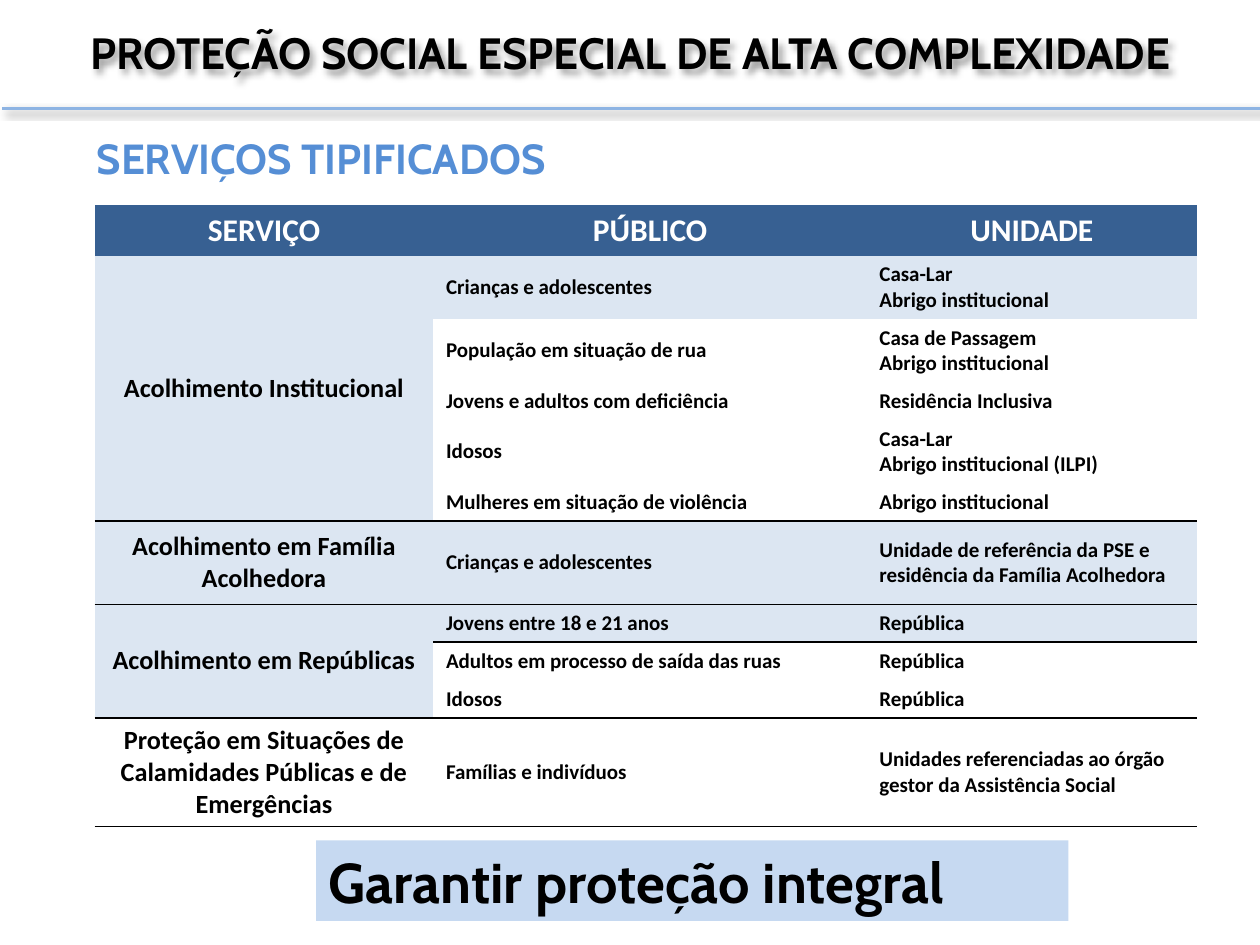
from lxml import etree
from pptx import Presentation
from pptx.dml.color import RGBColor
from pptx.enum.shapes import MSO_CONNECTOR, MSO_SHAPE
from pptx.enum.text import MSO_ANCHOR, PP_ALIGN
from pptx.oxml import parse_xml
from pptx.oxml.ns import nsdecls, qn
from pptx.util import Inches, Pt

LEFT, CENTER = PP_ALIGN.LEFT, PP_ALIGN.CENTER
TOP, MIDDLE = MSO_ANCHOR.TOP, MSO_ANCHOR.MIDDLE
BLACK = RGBColor(0x00, 0x00, 0x00)
WHITE = RGBColor(0xFF, 0xFF, 0xFF)
NAVY = RGBColor(0x37, 0x60, 0x92)
BLUE = RGBColor(0x55, 0x8E, 0xD5)
RULE_BLUE = RGBColor(0x8E, 0xB4, 0xE3)
PALE_BLUE = RGBColor(0xDC, 0xE6, 0xF2)
BANNER_BLUE = RGBColor(0xC6, 0xD9, 0xF1)
PLAIN_TABLE_STYLE = "{2D5ABB26-0587-4C30-8999-92F81FD0307C}"

presentation = Presentation()
presentation.slide_width, presentation.slide_height = Inches(10), Inches(7.5)
WIDTH, HEIGHT = presentation.slide_width, presentation.slide_height
slide = presentation.slides.add_slide(presentation.slide_layouts[5])


def shares(left, top, width, height):
    """Turn percentages of the slide into a position and a size."""
    return [int(share * side / 100) for share, side in
            zip((left, top, width, height), (WIDTH, HEIGHT, WIDTH, HEIGHT))]


def write(frame, text, font_name, size, color, alignment=LEFT):
    frame.text = text
    frame.word_wrap = True
    for paragraph in frame.paragraphs:
        paragraph.alignment = alignment
        paragraph.font.name = font_name
        paragraph.font.size = Pt(size)
        paragraph.font.bold = True
        paragraph.font.color.rgb = color


# Title and the rule below it, both with a soft shadow
title = slide.shapes.title
title.left, title.top, title.width, title.height = shares(0, 0, 100, 11.07)
title.text_frame.vertical_anchor = MIDDLE
write(title.text_frame, "PROTEÇÃO SOCIAL ESPECIAL DE ALTA COMPLEXIDADE",
      "Cabin", 25, BLACK, CENTER)

rule_left, rule_top, rule_width, _ = shares(0.2, 11.47, 100.1, 0)
rule = slide.shapes.add_connector(MSO_CONNECTOR.STRAIGHT, rule_left, rule_top,
                                  rule_left + rule_width, rule_top)
rule.line.color.rgb = RULE_BLUE
rule.line.width = Pt(1.5)

for shape in (title, rule):
    shape._element.spPr.append(parse_xml(
        f'<a:effectLst {nsdecls("a")}><a:outerShdw blurRad="{Pt(4)}" dist="{Pt(3)}" '
        'dir="2700000" algn="tl" rotWithShape="0"><a:srgbClr val="000000">'
        '<a:alpha val="40000"/></a:srgbClr></a:outerShdw></a:effectLst>'))

# Subtitle
subtitle = slide.shapes.add_textbox(*shares(6.7, 13.2, 92.3, 6.93))
subtitle.text_frame.vertical_anchor = MIDDLE
write(subtitle.text_frame, "SERVIÇOS TIPIFICADOS", "Cabin", 24, BLUE)

# Services: name, shading of the name, then (audience, unit) rows
HEADERS = ("SERVIÇO", "PÚBLICO", "UNIDADE")
SERVICES = [
    ("Acolhimento Institucional", PALE_BLUE, [
        ("Crianças e adolescentes", "Casa-Lar\nAbrigo institucional"),
        ("População em situação de rua", "Casa de Passagem\nAbrigo institucional"),
        ("Jovens e adultos com deficiência", "Residência Inclusiva"),
        ("Idosos", "Casa-Lar\nAbrigo institucional (ILPI)"),
        ("Mulheres em situação de violência", "Abrigo institucional")]),
    ("Acolhimento em Família Acolhedora", PALE_BLUE, [
        ("Crianças e adolescentes",
         "Unidade de referência da PSE e residência da Família Acolhedora")]),
    ("Acolhimento em Repúblicas", PALE_BLUE, [
        ("Jovens entre 18 e 21 anos", "República"),
        ("Adultos em processo de saída das ruas", "República"),
        ("Idosos", "República")]),
    ("Proteção em Situações de Calamidades Públicas e de Emergências", WHITE, [
        ("Famílias e indivíduos",
         "Unidades referenciadas ao órgão gestor da Assistência Social")]),
]
COLUMN_SHARES = (26.9, 34.4, 26.2)
ROW_SHARES = (5.33, 6.7, 6.7, 4, 6.7, 4, 8.8, 4, 4, 4, 11.5)

graphic_frame = slide.shapes.add_table(
    len(ROW_SHARES), len(COLUMN_SHARES),
    *shares(7.5, 21.7, sum(COLUMN_SHARES), sum(ROW_SHARES)))
table = graphic_frame.table
table.horz_banding = False
table._tbl.tblPr.find(qn("a:tableStyleId")).text = PLAIN_TABLE_STYLE
for column, share in zip(table.columns, COLUMN_SHARES):
    column.width = int(WIDTH * share / 100)
for row, share in zip(table.rows, ROW_SHARES):
    row.height = int(HEIGHT * share / 100)

for column_index, header in enumerate(HEADERS):
    cell = table.cell(0, column_index)
    cell.fill.solid()
    cell.fill.fore_color.rgb = NAVY
    cell.vertical_anchor = TOP
    write(cell.text_frame, header, "Calibri", 18, WHITE, CENTER)

first = 1
for service, shade, entries in SERVICES:
    last = first + len(entries) - 1
    name_cell = table.cell(first, 0)
    if last > first:
        name_cell.merge(table.cell(last, 0))
    write(name_cell.text_frame, service, "Calibri", 15, BLACK, CENTER)
    for row_index, entry in enumerate(entries, first):
        for column_index in range(len(HEADERS)):
            cell = table.cell(row_index, column_index)
            cell.vertical_anchor = MIDDLE
            cell.fill.solid()
            shaded = column_index == 0 or row_index == first
            cell.fill.fore_color.rgb = shade if shaded else WHITE
            if column_index > 0:
                write(cell.text_frame, entry[column_index - 1], "Calibri", 12, BLACK)

            # Black lines separate the services
            edges = []
            if row_index == last or cell.is_merge_origin:
                edges.append("lnB")
            if row_index == first and first > 1:
                edges.append("lnT")
            for edge in edges:
                border = etree.Element(qn(f"a:{edge}"), w=str(Pt(1)))
                fill = etree.SubElement(border, qn("a:solidFill"))
                etree.SubElement(fill, qn("a:srgbClr"), val=str(BLACK))
                cell._tc.get_or_add_tcPr().insert(0, border)
    first = last + 1

# Closing banner
banner = slide.shapes.add_shape(MSO_SHAPE.RECTANGLE, *shares(25.1, 88.93, 59.7, 8.53))
banner.shadow.inherit = False
banner.fill.solid()
banner.fill.fore_color.rgb = BANNER_BLUE
banner.line.fill.background()
banner.text_frame.vertical_anchor = MIDDLE
write(banner.text_frame, "Garantir proteção integral", "Cabin", 32, BLACK)

presentation.save("out.pptx")
